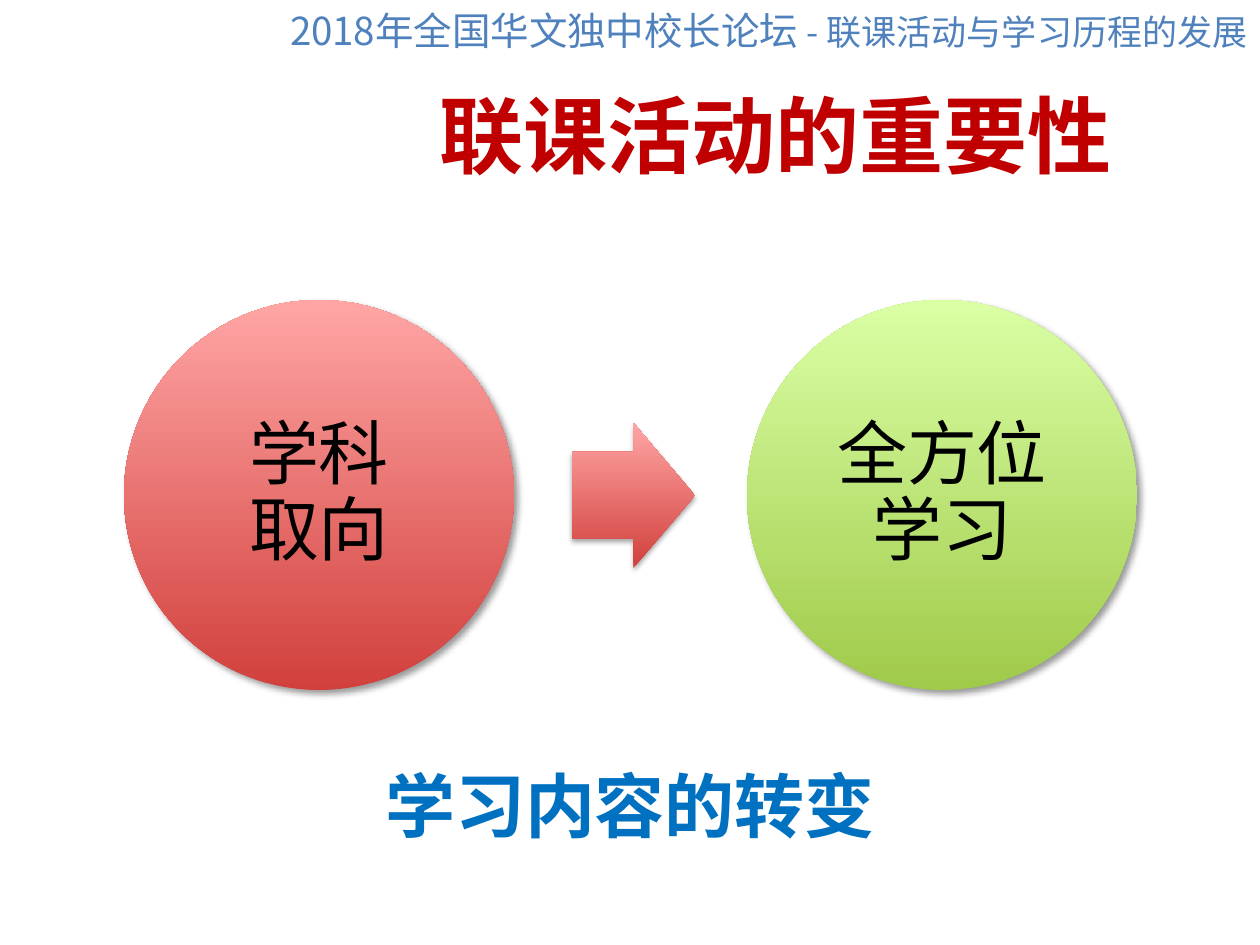
from dataclasses import dataclass

from lxml import etree
from pptx import Presentation
from pptx import util as u
from pptx.dml.color import RGBColor
from pptx.enum import shapes, text
from pptx.oxml import ns

SCALE = u.Inches(1) / 126


@dataclass(frozen=True)
class Theme:
    """Colours, font and type sizes of the slide."""
    font: str = "Noto Sans CJK SC"
    title: str = "C00000"
    note: str = "0070C0"
    head: str = "4F81BD"
    ink: str = "000000"
    white: str = "FFFFFF"
    rim: str = "95B3D7"
    red: tuple[str, str] = ("D1403C", "FFA6A5")
    green: tuple[str, str] = ("A0CA4A", "DAFFA5")
    big: int = 48
    mid: int = 40
    small: int = 22
    tiny: int = 20


@dataclass(frozen=True)
class Box:
    """Place and size in px."""
    x: int
    y: int
    w: int
    h: int

    def emu(self) -> list[int]:
        """Return the four lengths in EMU."""
        return [px(n) for n in (self.x, self.y, self.w, self.h)]

    def inset(self, gap: int) -> "Box":
        """Return the box shrunk by a gap on each side."""
        return Box(self.x + gap, self.y + gap, self.w - 2 * gap, self.h - 2 * gap)


@dataclass(frozen=True)
class Style:
    """Look of a run, with its outline colour and width in points."""
    size: int
    color: str
    bold: bool = False
    rim: str = ""
    width: float = 0


@dataclass(frozen=True)
class Shade:
    """Shadow strength in percent, blur and distance in points, angle in degrees."""
    alpha: int
    blur: float
    dist: float
    angle: int


@dataclass(frozen=True)
class Disc:
    """A circle with its lines of text."""
    x: int
    fill: tuple[str, str]
    lines: tuple[str, ...]


T = Theme()


def px(n: int) -> int:
    """Turn px into EMU."""
    return u.Emu(round(n * SCALE))


def node(root, tag: str, **attrs):
    """Add an XML element under root."""
    return etree.SubElement(root, ns.qn(tag), {k: str(v) for k, v in attrs.items()})


def add_run(para, words: str, style: Style) -> None:
    """Add one styled run to a paragraph."""
    run = para.add_run()
    run.text = words
    font = run.font
    font.size, font.bold, font.name = u.Pt(style.size), style.bold, T.font
    font.color.rgb = RGBColor.from_string(style.color)
    props = run._r.get_or_add_rPr()
    node(props, "a:ea", typeface=T.font)
    if style.rim:
        line = node(props, "a:ln", w=u.Pt(style.width))
        node(node(line, "a:solidFill"), "a:srgbClr", val=style.rim)
        props.insert(0, line)


def add_text(root, box: Box, align, anchor=text.MSO_ANCHOR.TOP):
    """Add a wrapping text box and return its frame."""
    frame = root.add_textbox(*box.emu()).text_frame
    frame.word_wrap = True
    frame.vertical_anchor = anchor
    frame.paragraphs[0].alignment = align
    return frame


def add_form(root, kind, box: Box, fill: tuple[str, str], shade: Shade):
    """Add a gradient shape with a soft shadow."""
    form = root.add_shape(kind, *box.emu())
    form.line.fill.background()
    form.fill.gradient()
    form.fill.gradient_angle = 90
    for stop, color, spot in zip(form.fill.gradient_stops, fill, (0, 1)):
        stop.color.rgb = RGBColor.from_string(color)
        stop.position = spot
    form.shadow.inherit = False
    effects = form._element.spPr.find(ns.qn("a:effectLst"))
    outer = node(effects, "a:outerShdw", blurRad=u.Pt(shade.blur), dist=u.Pt(shade.dist),
                 dir=shade.angle * 60000, rotWithShape=0)
    node(node(outer, "a:srgbClr", val=T.ink), "a:alpha", val=shade.alpha * 1000)
    return form


def add_disc(root, disc: Disc) -> None:
    """Add a circle and the text centred in it."""
    box = Box(disc.x, 300, 390, 390)
    add_form(root, shapes.MSO_SHAPE.OVAL, box, disc.fill, Shade(40, 4, 3, 45))
    frame = add_text(root, box.inset(57), text.PP_ALIGN.CENTER, text.MSO_ANCHOR.MIDDLE)
    frame.margin_left = frame.margin_right = px(8)
    frame.margin_top = frame.margin_bottom = px(8)
    para = frame.paragraphs[0]
    para.line_spacing = 0.9
    for i, words in enumerate(disc.lines):
        if i:
            para.add_line_break()
        add_run(para, words, Style(T.mid, T.ink))


def main() -> None:
    """Build the slide and save it."""
    deck = Presentation()
    deck.slide_width, deck.slide_height = px(1260), px(945)
    root = deck.slides.add_slide(deck.slide_layouts[6]).shapes

    title = add_text(root, Box(292, 55, 968, 158), text.PP_ALIGN.CENTER, text.MSO_ANCHOR.MIDDLE)
    add_run(title.paragraphs[0], "联课活动的重要性", Style(T.big, T.title, True, T.white, 0.75))

    group = root.add_group_shape().shapes
    add_disc(group, Disc(124, T.red, ("学科", "取向")))
    arrow = add_form(group, shapes.MSO_SHAPE.RIGHT_ARROW, Box(572, 423, 123, 145), T.red,
                     Shade(35, 3.1, 1.8, 90))
    arrow.adjustments[0], arrow.adjustments[1] = 0.6, 0.5
    add_disc(group, Disc(747, T.green, ("全方位", "学习")))

    note = add_text(root, Box(0, 756, 1260, 97), text.PP_ALIGN.CENTER)
    note.auto_size = text.MSO_AUTO_SIZE.SHAPE_TO_FIT_TEXT
    add_run(note.paragraphs[0], "学习内容的转变", Style(T.mid, T.note, True, T.white, 0.75))

    head = add_text(root, Box(0, 1, 1260, 59), text.PP_ALIGN.RIGHT)
    head.auto_size = text.MSO_AUTO_SIZE.SHAPE_TO_FIT_TEXT
    for words, size in (("2018年全国华文独中校长论坛 ", T.small),
                        ("- 联课活动与学习历程的发展", T.tiny)):
        add_run(head.paragraphs[0], words, Style(size, T.head, False, T.rim, 0.25))

    deck.save("out.pptx")


if __name__ == "__main__":
    main()
